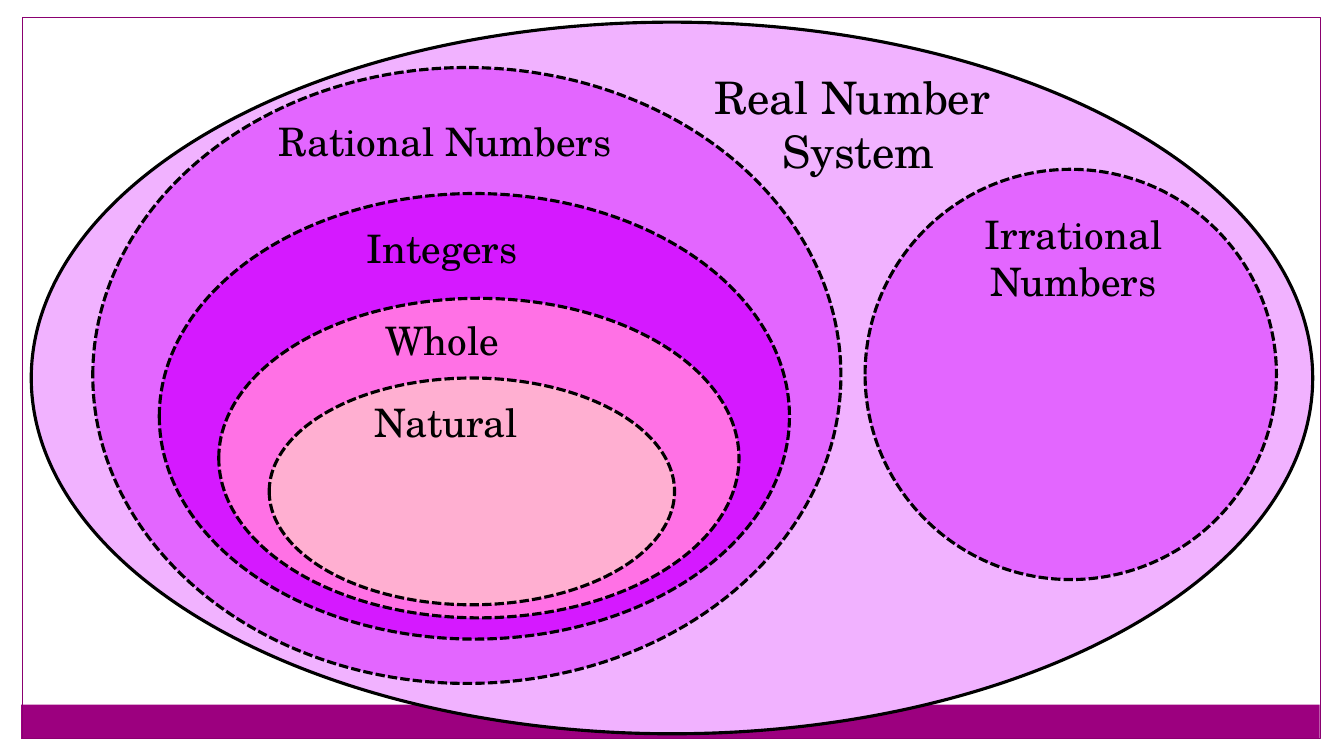
from pptx import Presentation
from pptx.dml.color import RGBColor
from pptx.enum.dml import MSO_LINE
from pptx.enum.shapes import MSO_SHAPE
from pptx.enum.text import MSO_AUTO_SIZE, PP_ALIGN
from pptx.util import Inches, Pt

RECTANGLE = MSO_SHAPE.RECTANGLE
OVAL = MSO_SHAPE.OVAL
SOLID = MSO_LINE.SOLID
DASHED = MSO_LINE.SQUARE_DOT
CENTER = PP_ALIGN.CENTER
GROW = MSO_AUTO_SIZE.SHAPE_TO_FIT_TEXT

BLACK = RGBColor(0x00, 0x00, 0x00)
BAND_PURPLE = RGBColor(0x9C, 0x00, 0x7F)
FRAME_PURPLE = RGBColor(0x8A, 0x00, 0x70)
LILAC = RGBColor(0xF1, 0xB2, 0xFF)
ORCHID = RGBColor(0xE3, 0x66, 0xFF)
VIOLET = RGBColor(0xD5, 0x19, 0xFF)
PINK = RGBColor(0xFF, 0x71, 0xE5)
ROSE = RGBColor(0xFF, 0xAF, 0xD1)

FONT = "TeX Gyre Schola"

NUMBER_SETS = [
    ((0.31, 0.22, 12.71, 7.06), LILAC, SOLID),
    ((0.92, 0.67, 7.42, 6.11), ORCHID, DASHED),
    ((8.58, 1.68, 4.08, 4.07), ORCHID, DASHED),
    ((1.58, 1.92, 6.25, 4.42), VIOLET, DASHED),
    ((2.17, 2.96, 5.16, 3.17), PINK, DASHED),
    ((2.67, 3.75, 4.02, 2.25), ROSE, DASHED),
]

LABELS = [
    ((6.86, 0.64, 3.31, 1.18), ["Real Number ", "System"], 32),
    ((9.52, 2.04, 2.25, 1.04), ["Irrational Numbers"], 28),
    ((2.49, 1.11, 3.85, 0.57), ["Rational Numbers"], 28),
    ((2.46, 2.18, 3.85, 0.57), ["Integers"], 28),
    ((2.46, 3.09, 3.85, 0.57), ["Whole"], 28),
    ((2.5, 3.9, 3.85, 0.57), ["Natural"], 28),
]


def add_figure(slide, kind, box, fill=None, line=None, width=0, dash=SOLID):
    shape = slide.shapes.add_shape(kind, *map(Inches, box))
    shape.shadow.inherit = False
    if fill is None:
        shape.fill.background()
    else:
        shape.fill.solid()
        shape.fill.fore_color.rgb = fill
    if line is None:
        shape.line.fill.background()
    else:
        shape.line.color.rgb = line
        shape.line.width = Pt(width)
        shape.line.dash_style = dash


def add_label(slide, box, lines, size):
    frame = slide.shapes.add_textbox(*map(Inches, box)).text_frame
    frame.word_wrap = True
    frame.auto_size = GROW
    for index, text in enumerate(lines):
        paragraph = frame.add_paragraph() if index else frame.paragraphs[0]
        paragraph.alignment = CENTER
        run = paragraph.add_run()
        run.text = text
        run.font.name = FONT
        run.font.size = Pt(size)
        run.font.color.rgb = BLACK


def main():
    presentation = Presentation()
    presentation.slide_width = Inches(13.33)
    presentation.slide_height = Inches(7.5)
    slide = presentation.slides.add_slide(presentation.slide_layouts[6])

    add_figure(slide, RECTANGLE, (0.21, 6.99, 12.88, 0.34), fill=BAND_PURPLE)
    add_figure(slide, RECTANGLE, (0.22, 0.17, 12.88, 7.16),
               line=FRAME_PURPLE, width=0.75)
    for box, fill, dash in NUMBER_SETS:
        add_figure(slide, OVAL, box, fill, BLACK, 2.25, dash)
    for box, lines, size in LABELS:
        add_label(slide, box, lines, size)

    presentation.save("out.pptx")


if __name__ == "__main__":
    main()
